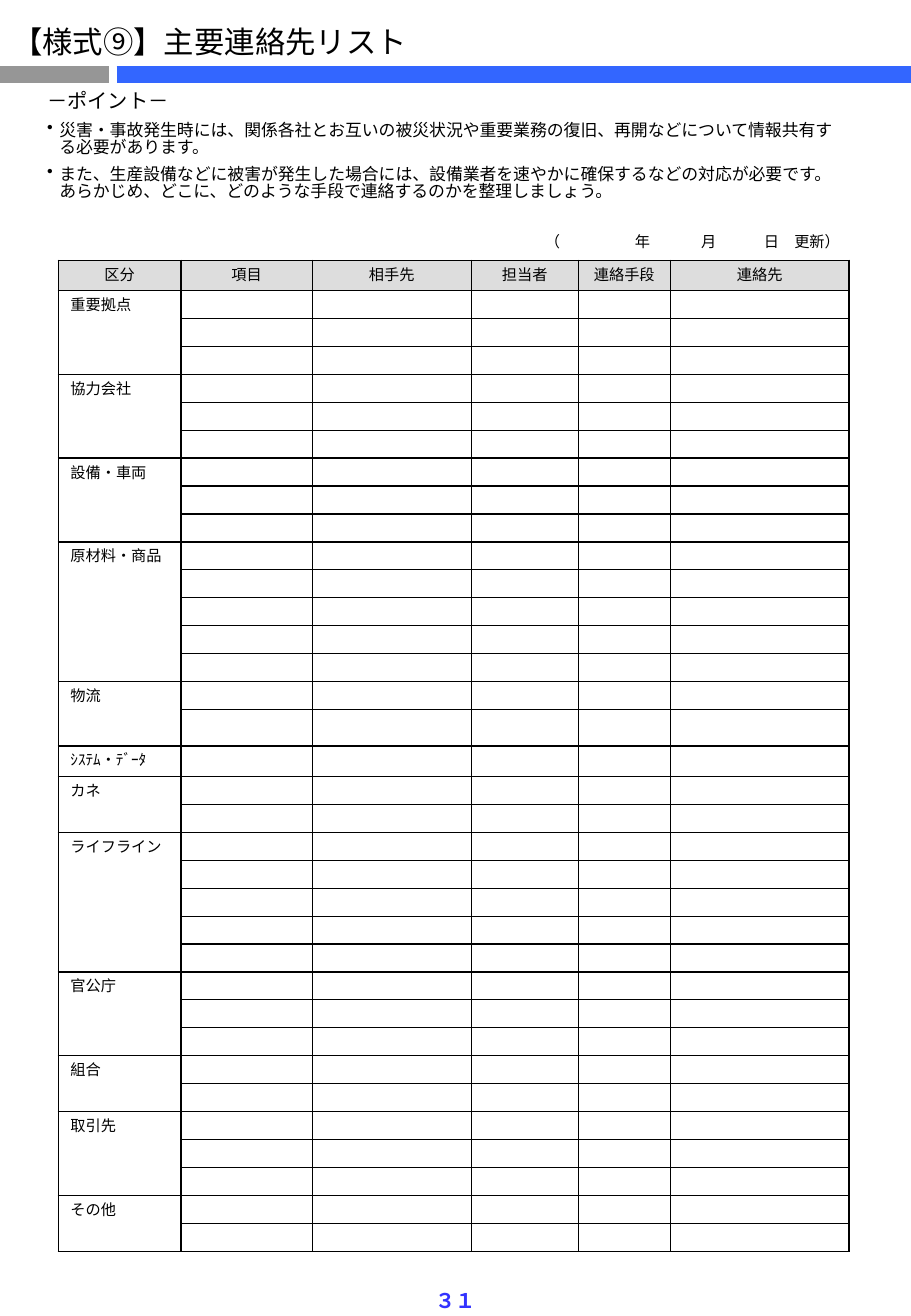
from dataclasses import dataclass
from typing import Optional

from lxml import etree
from pptx import Presentation
from pptx.dml.color import RGBColor
from pptx.enum.shapes import MSO_CONNECTOR
from pptx.enum.text import MSO_ANCHOR, MSO_AUTO_SIZE, PP_ALIGN
from pptx.oxml.ns import qn
from pptx.util import Inches, Pt

LEFT, CENTER, RIGHT = PP_ALIGN.LEFT, PP_ALIGN.CENTER, PP_ALIGN.RIGHT
TOP, MIDDLE = MSO_ANCHOR.TOP, MSO_ANCHOR.MIDDLE
STRAIGHT = MSO_CONNECTOR.STRAIGHT
NO_AUTOFIT = MSO_AUTO_SIZE.NONE

FONT = "Noto Sans CJK JP"
BLACK = RGBColor(0x00, 0x00, 0x00)
GRAY = RGBColor(0x96, 0x96, 0x96)
BLUE = RGBColor(0x33, 0x66, 0xFF)
PAGE_BLUE = RGBColor(0x33, 0x33, 0xFF)
HEADER_FILL = RGBColor(0xDD, 0xDD, 0xDD)
THIN, THICK = 0.75, 1


@dataclass(frozen=True)
class Bar:
    start: float
    end: float
    color: RGBColor


@dataclass(frozen=True)
class Group:
    name: str
    rows: int
    inner_line: float = THIN


@dataclass(frozen=True)
class Point:
    text: str
    size: int = 10
    bullet: bool = True


@dataclass(frozen=True)
class DatePart:
    text: str
    width: float
    align: PP_ALIGN = CENTER


BARS = [Bar(0, 0.9, GRAY), Bar(0.96, 7.5, BLUE)]
POINTS = [
    Point("－ポイント－", 12, False),
    Point("災害・事故発生時には、関係各社とお互いの被災状況や重要業務の復旧、"
          "再開などについて情報共有する必要があります。"),
    Point("また、生産設備などに被害が発生した場合には、設備業者を速やかに確保するなどの対応が必要です。"
          "あらかじめ、どこに、どのような手段で連絡するのかを整理しましょう。"),
]
DATE_PARTS = [
    DatePart("（", 0.39, RIGHT), DatePart("", 0.59), DatePart("年", 0.18),
    DatePart("", 0.39), DatePart("月", 0.13), DatePart("", 0.39),
    DatePart("日　更新）", 0.76, LEFT),
]
HEADERS = ["区分", "項目", "相手先", "担当者", "連絡手段", "連絡先"]
COLUMN_WIDTHS = [1.01, 1.08, 1.31, 0.88, 0.76, 1.47]
GROUPS = [
    Group("重要拠点", 3), Group("協力会社", 3), Group("設備・車両", 3),
    Group("原材料・商品", 5), Group("物流", 2), Group("ｼｽﾃﾑ・ﾃﾞｰﾀ", 1),
    Group("カネ", 2), Group("ライフライン", 5), Group("官公庁", 3),
    Group("組合", 2, 0.5), Group("取引先", 3), Group("その他", 2),
]
ROW_HEIGHT = 0.23
TALL_ROWS = {0: 0.25, 16: 0.3, 17: 0.25}


def format_runs(paragraph, size: float, color: RGBColor = BLACK, bold: bool = False) -> None:
    for run in paragraph.runs:
        run.font.size, run.font.bold, run.font.name = Pt(size), bold, FONT
        run.font.color.rgb = color
        etree.SubElement(run.font._element, qn("a:ea"), typeface=FONT)


def draw_bar(slide, bar: Bar) -> None:
    y = Inches(0.61)
    line = slide.shapes.add_connector(STRAIGHT, Inches(bar.start), y, Inches(bar.end), y)
    line.line.color.rgb, line.line.width = bar.color, Pt(10)
    etree.SubElement(line._element.spPr, qn("a:effectLst"))


def write_point(paragraph, point: Point) -> None:
    paragraph.text = point.text
    paragraph.space_after, paragraph.line_spacing = Pt(6), 0.84
    format_runs(paragraph, point.size)
    properties = paragraph._p.get_or_add_pPr()
    properties.set("marL", str(Inches(0.1)))
    properties.set("indent", str(-Inches(0.1)))
    if point.bullet:
        etree.SubElement(properties, qn("a:buChar"), char="•")


def set_borders(cell, left: Optional[float] = None, right: Optional[float] = None,
                top: Optional[float] = None, bottom: Optional[float] = None) -> None:
    properties = cell._tc.get_or_add_tcPr()
    for side, weight in zip("LRTB", (left, right, top, bottom)):
        edge = etree.SubElement(properties, qn(f"a:ln{side}"), w=str(Pt(weight or 0)))
        if weight is None:
            etree.SubElement(edge, qn("a:noFill"))
        else:
            paint = etree.SubElement(edge, qn("a:solidFill"))
            etree.SubElement(paint, qn("a:srgbClr"), val=str(BLACK))


def write_cell(cell, text: str, align: PP_ALIGN, side_margin: float) -> None:
    cell.margin_left = cell.margin_right = Inches(side_margin)
    cell.margin_top = cell.margin_bottom = Inches(0.02)
    cell.vertical_anchor = TOP
    paragraph = cell.text_frame.paragraphs[0]
    if text:
        paragraph.text, paragraph.alignment = text, align
        paragraph.space_before = Pt(1.8)
        format_runs(paragraph, 9)
    else:
        etree.SubElement(paragraph._p, qn("a:endParaRPr"), sz="900")


def add_grid(slide, left: float, top: float, widths: list[float], heights: list[float]):
    grid = slide.shapes.add_table(
        len(heights), len(widths), Inches(left), Inches(top),
        Inches(sum(widths)), Inches(sum(heights))).table
    grid.first_row = grid.horz_banding = False
    for column, width in zip(grid.columns, widths):
        column.width = Inches(width)
    for row, height in zip(grid.rows, heights):
        row.height = Inches(height)
    return grid


def draw_date(slide) -> None:
    date = add_grid(slide, 4.22, 1.87, [part.width for part in DATE_PARTS], [0.23])
    for cell, part in zip(date.iter_cells(), DATE_PARTS):
        set_borders(cell)
        cell.fill.background()
        write_cell(cell, part.text, part.align, 0)


def draw_contacts(slide) -> None:
    # Weights of the horizontal rules, and the row where each group starts
    rules, names = [THIN], {}
    for group in GROUPS:
        names[len(rules)] = group
        rules += [THICK] + [group.inner_line] * (group.rows - 1)
    row_count, last = len(rules), len(HEADERS) - 1
    rules.append(THICK)

    heights = [TALL_ROWS.get(row, ROW_HEIGHT) for row in range(row_count)]
    contacts = add_grid(slide, 0.48, 2.14, COLUMN_WIDTHS, heights)
    for start, group in names.items():
        if group.rows > 1:
            contacts.cell(start, 0).merge(contacts.cell(start + group.rows - 1, 0))

    def rule(line: int, column: int) -> Optional[float]:
        if column == 0 and 0 < line < row_count and line not in names:
            return None
        return THICK if line == 2 and column in (1, 2, 3) else rules[line]

    for row in range(row_count):
        for column in range(last + 1):
            cell = contacts.cell(row, column)
            group = names.get(row) if column == 0 else None
            bottom = row + (group.rows if group else 1)
            set_borders(cell, THICK if column == 0 else THIN,
                        THICK if column == last else THIN,
                        rule(row, column), rule(bottom, column))
            if row == 0:
                cell.fill.solid()
                cell.fill.fore_color.rgb = HEADER_FILL
                write_cell(cell, HEADERS[column], CENTER, 0.1)
            else:
                cell.fill.background()
                write_cell(cell, group.name if group else "", LEFT, 0.1)


def main() -> None:
    prs = Presentation()
    prs.slide_width, prs.slide_height = Inches(7.5), Inches(10.83)
    slide = prs.slides.add_slide(prs.slide_layouts[5])

    # Title and bars
    for bar in BARS:
        draw_bar(slide, bar)
    title = slide.shapes.title
    title.left, title.top, title.width, title.height = map(Inches, (0, 0.14, 3.48, 0.4))
    title.text_frame.text = "【様式⑨】主要連絡先リスト"
    title.text_frame.word_wrap, title.text_frame.auto_size = False, NO_AUTOFIT
    title.text_frame.vertical_anchor = MIDDLE
    title.text_frame.paragraphs[0].alignment = LEFT
    format_runs(title.text_frame.paragraphs[0], 18)

    # Points
    points = slide.shapes.add_textbox(*map(Inches, (0.29, 0.71, 6.77, 1.14))).text_frame
    points.word_wrap = True
    for index, point in enumerate(POINTS):
        write_point(points.add_paragraph() if index else points.paragraphs[0], point)

    # Update date and contact list
    draw_date(slide)
    draw_contacts(slide)

    # Page number
    page = slide.shapes.add_textbox(*map(Inches, (3.48, 10.55, 0.54, 0.31))).text_frame
    page.text, page.word_wrap = "３１", False
    page.paragraphs[0].alignment = CENTER
    format_runs(page.paragraphs[0], 12, PAGE_BLUE, True)
    prs.save("out.pptx")


if __name__ == "__main__":
    main()
